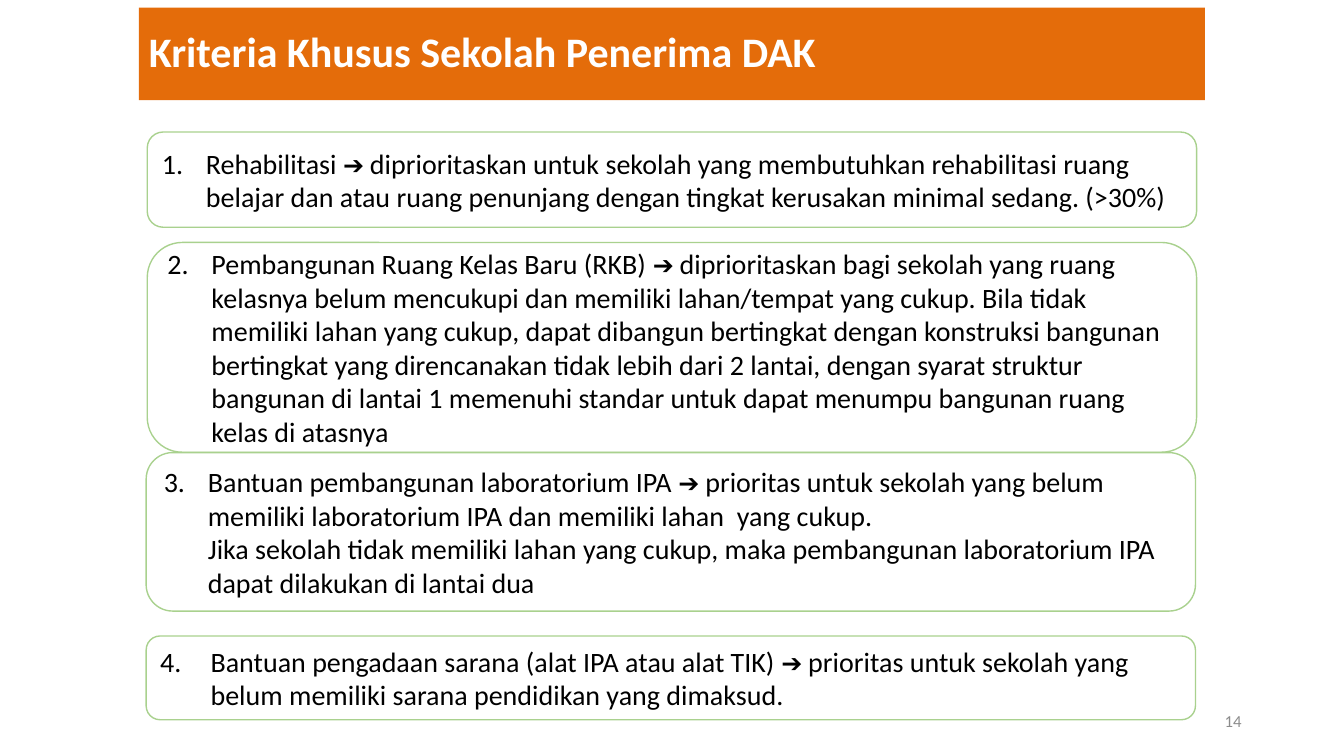
from dataclasses import dataclass

from lxml.etree import SubElement
from pptx import Presentation
from pptx.dml.color import RGBColor
from pptx.enum.shapes import MSO_SHAPE as Preset
from pptx.enum.text import MSO_ANCHOR as Anchor, PP_ALIGN as Align
from pptx.oxml.ns import qn
from pptx.util import Pt


@dataclass(frozen=True)
class Theme:
    font: str = "Calibri"
    banner: RGBColor = RGBColor(0xE4, 0x6C, 0x0A)
    banner_text: RGBColor = RGBColor(0xFF, 0xFF, 0xFF)
    outline: RGBColor = RGBColor(0xA9, 0xD1, 0x8E)
    body_text: RGBColor = RGBColor(0, 0, 0)
    muted_text: RGBColor = RGBColor(0x8C, 0x8C, 0x8C)
    title_size: int = 30
    body_size: int = 20
    arrow_size: int = 18
    number_size: int = 12


THEME = Theme()
TITLE = "Kriteria Khusus Sekolah Penerima DAK"
TITLE_BOX = (99.2, 5.5, 761.5, 66)
PAGE_NUMBER_BOX = (678, 500.4, 216, 28.8)

# Each criterion: box, hanging indent, subject, priority, further paragraphs
CRITERIA = [
    ((105.2, 94.3, 749.5, 68), 31.5, "Rehabilitasi ",
     "diprioritaskan untuk sekolah yang membutuhkan rehabilitasi ruang belajar "
     "dan atau ruang penunjang dengan tingkat kerusakan minimal sedang. (>30%)", []),
    ((105.2, 173.2, 749.5, 149.8), 31.5, "Pembangunan Ruang Kelas Baru (RKB) ",
     "diprioritaskan bagi sekolah yang ruang kelasnya belum mencukupi dan memiliki "
     "lahan/tempat yang cukup. Bila tidak memiliki lahan yang cukup, dapat dibangun "
     "bertingkat dengan konstruksi bangunan bertingkat yang direncanakan tidak lebih "
     "dari 2 lantai, dengan syarat struktur bangunan di lantai 1 memenuhi standar "
     "untuk dapat menumpu bangunan ruang kelas di atasnya", []),
    ((104.4, 323.3, 749.5, 113.2), 31.5, "Bantuan pembangunan laboratorium IPA ",
     "prioritas untuk sekolah yang belum memiliki laboratorium IPA dan memiliki "
     "lahan  yang cukup.",
     ["Jika sekolah tidak memiliki lahan yang cukup, maka pembangunan laboratorium "
      "IPA dapat dilakukan di lantai dua"]),
    ((104.4, 454.3, 749.5, 59.8), 36, "Bantuan pengadaan sarana (alat IPA atau alat TIK) ",
     "prioritas untuk sekolah yang belum memiliki sarana pendidikan yang dimaksud.", []),
]


def in_points(box):
    return [Pt(length) for length in box]


def add_run(paragraph, text, size, color, bold=False):
    run = paragraph.add_run()
    run.text = text
    run.font.name = THEME.font
    run.font.size = Pt(size)
    run.font.color.rgb = color
    run.font.bold = bold


def set_indent(paragraph, left, number=None):
    """Indent a paragraph; with a number, hang that number in the indent."""
    properties = paragraph._p.get_or_add_pPr()
    properties.set("marL", str(Pt(left)))
    properties.set("indent", str(Pt(-left if number else 0)))
    if number:
        SubElement(properties, qn("a:buFont"), typeface="+mj-lt")
        SubElement(properties, qn("a:buAutoNum"), type="arabicPeriod", startAt=str(number))


def prepare_text(shape):
    frame = shape.text_frame
    frame.word_wrap = True
    frame.vertical_anchor = Anchor.MIDDLE
    return frame


def add_title_banner(slide, box):
    banner = slide.shapes.add_shape(Preset.RECTANGLE, *in_points(box))
    banner.shadow.inherit = False
    banner.fill.solid()
    banner.fill.fore_color.rgb = THEME.banner
    banner.line.fill.background()
    paragraph = prepare_text(banner).paragraphs[0]
    paragraph.alignment = Align.LEFT
    paragraph.line_spacing = 0.9
    add_run(paragraph, TITLE, THEME.title_size, THEME.banner_text, bold=True)


def add_criterion(slide, box, number, indent, subject, priority, details):
    card = slide.shapes.add_shape(Preset.ROUNDED_RECTANGLE, *in_points(box))
    card.shadow.inherit = False
    card.fill.background()
    card.line.color.rgb = THEME.outline
    card.line.width = Pt(1)
    frame = prepare_text(card)
    paragraph = frame.paragraphs[0]
    paragraph.alignment = Align.LEFT
    set_indent(paragraph, indent, number)
    add_run(paragraph, subject, THEME.body_size, THEME.body_text)
    add_run(paragraph, "➔ ", THEME.arrow_size, THEME.body_text)
    add_run(paragraph, priority, THEME.body_size, THEME.body_text)
    for detail in details:
        paragraph = frame.add_paragraph()
        paragraph.alignment = Align.LEFT
        set_indent(paragraph, indent)
        add_run(paragraph, detail, THEME.body_size, THEME.body_text)


def add_page_number(slide, box, number):
    text_box = slide.shapes.add_textbox(*in_points(box))
    paragraph = prepare_text(text_box).paragraphs[0]
    paragraph.alignment = Align.RIGHT
    add_run(paragraph, str(number), THEME.number_size, THEME.muted_text)


def main():
    presentation = Presentation()
    presentation.slide_width = Pt(960)
    presentation.slide_height = Pt(540)
    slide = presentation.slides.add_slide(presentation.slide_layouts[6])
    add_title_banner(slide, TITLE_BOX)
    for number, (box, *content) in enumerate(CRITERIA, start=1):
        add_criterion(slide, box, number, *content)
    add_page_number(slide, PAGE_NUMBER_BOX, 14)
    presentation.save("out.pptx")


if __name__ == "__main__":
    main()
